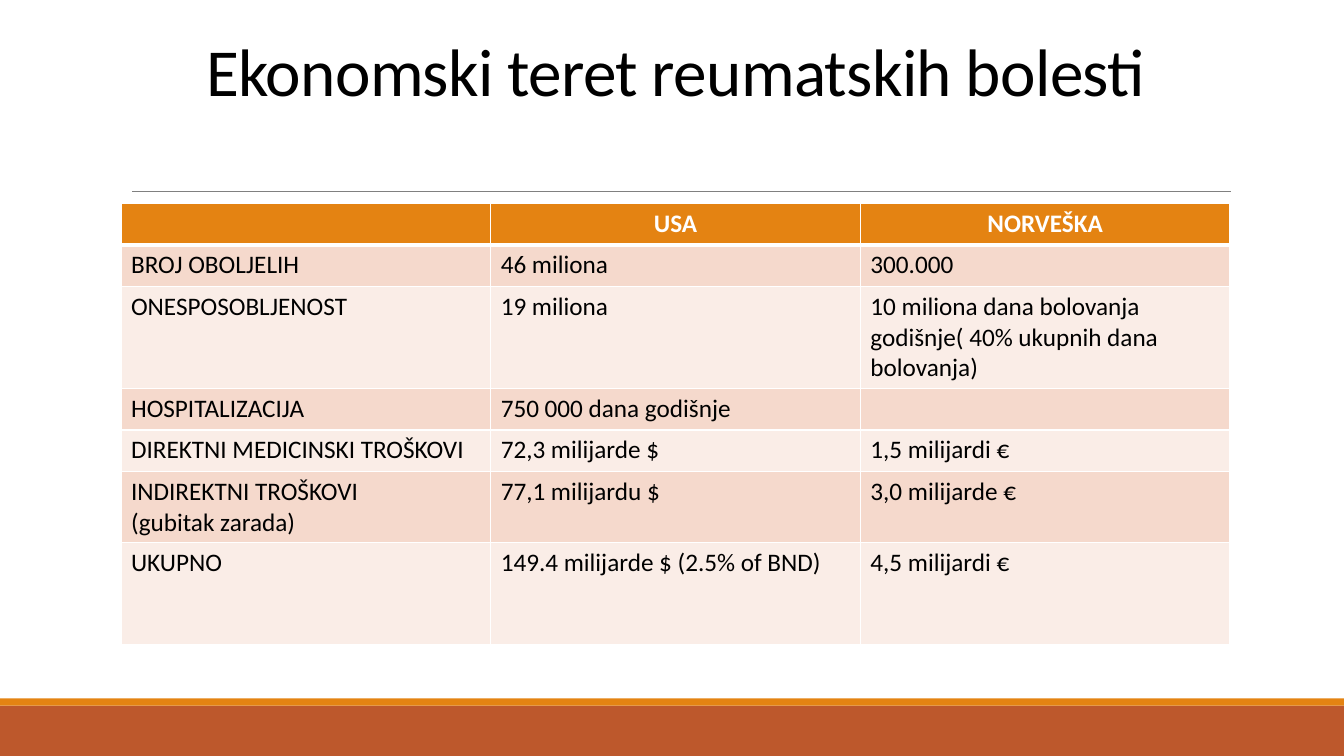
"""Build the slide on the economic burden of rheumatic diseases."""
from dataclasses import dataclass

from lxml.etree import SubElement
from pptx import Presentation
from pptx.dml.color import RGBColor
from pptx.enum.shapes import MSO_CONNECTOR, MSO_SHAPE
from pptx.enum.text import MSO_ANCHOR, MSO_AUTO_SIZE, PP_ALIGN
from pptx.oxml.ns import qn
from pptx.slide import Slide
from pptx.table import _Cell
from pptx.text.text import TextFrame
from pptx.util import Inches, Pt


@dataclass(frozen=True)
class Theme:
    font: str = "Calibri"
    ink: str = "000000"
    paper: str = "FFFFFF"
    rule: str = "808080"
    accent: str = "E48312"
    footer: str = "BD582C"
    bands: tuple[str, str] = ("F5D9CC", "FAEDE7")
    title_size: float = 48
    table_size: float = 18


@dataclass(frozen=True)
class Bar:
    top: float
    height: float
    color: str


@dataclass(frozen=True)
class Row:
    height: float
    cells: tuple[str, str, str]


THEME = Theme()
SLIDE_WIDTH, SLIDE_HEIGHT = 13.33, 7.5
LEFT, WIDTH = 1.2, 11

FOOTER_BARS = (Bar(7, 0.5, THEME.footer), Bar(6.93, 0.07, THEME.accent))
BURDEN_ROWS = (
    Row(0.41, ("", "USA", "NORVEŠKA")),
    Row(0.41, ("BROJ OBOLJELIH", "46 miliona", "300.000")),
    Row(1.01, ("ONESPOSOBLJENOST", "19 miliona",
               "10 miliona dana bolovanja godišnje( 40% ukupnih dana bolovanja)")),
    Row(0.41, ("HOSPITALIZACIJA", "750 000 dana godišnje", "")),
    Row(0.41, ("DIREKTNI MEDICINSKI TROŠKOVI", "72,3 milijarde $", "1,5 milijardi €")),
    Row(0.71, ("INDIREKTNI TROŠKOVI\n(gubitak zarada)", "77,1 milijardu $", "3,0 milijarde €")),
    Row(1.01, ("UKUPNO", "149.4 milijarde $ (2.5% of BND)", "4,5 milijardi €")),
)


def write(frame: TextFrame, text: str, *, size: float, color: str = THEME.ink,
          bold: bool = False, align: PP_ALIGN = PP_ALIGN.LEFT,
          line_spacing: float = 1.0, tracking: float = 0) -> None:
    frame.text = text
    for paragraph in frame.paragraphs:
        paragraph.alignment = align
        paragraph.line_spacing = line_spacing
        paragraph.font.size = Pt(size)
        for run in paragraph.runs:
            run.font.name = THEME.font
            run.font.size = Pt(size)
            run.font.bold = bold
            run.font.color.rgb = RGBColor.from_string(color)
            if tracking:
                run.font._element.set("spc", str(round(tracking * 100)))


def add_bar(slide: Slide, bar: Bar) -> None:
    strip = slide.shapes.add_shape(MSO_SHAPE.RECTANGLE, 0, Inches(bar.top),
                                   Inches(SLIDE_WIDTH), Inches(bar.height))
    strip.shadow.inherit = False
    strip.fill.solid()
    strip.fill.fore_color.rgb = RGBColor.from_string(bar.color)
    strip.line.fill.background()


def add_rule(slide: Slide) -> None:
    rule = slide.shapes.add_connector(MSO_CONNECTOR.STRAIGHT, Inches(1.31), Inches(1.9),
                                      Inches(12.21), Inches(1.9))
    rule.line.color.rgb = RGBColor.from_string(THEME.rule)
    rule.line.width = Pt(0.5)
    SubElement(rule._element.spPr, qn("a:effectLst"))


def add_title(slide: Slide, text: str) -> None:
    title = slide.shapes.title
    title.left, title.top = Inches(LEFT), Inches(0.31)
    title.width, title.height = Inches(WIDTH), Inches(1.59)
    frame = title.text_frame
    frame.word_wrap = True
    frame.auto_size = MSO_AUTO_SIZE.NONE
    frame.vertical_anchor = MSO_ANCHOR.BOTTOM
    frame.margin_bottom = Inches(0.81)
    write(frame, text, size=THEME.title_size, align=PP_ALIGN.CENTER,
          line_spacing=0.85, tracking=-0.5)


def style_cell(cell: _Cell, fill: str, top: float, bottom: float) -> None:
    properties = cell._tc.get_or_add_tcPr()
    for side, width in (("lnL", 1), ("lnR", 1), ("lnT", top), ("lnB", bottom)):
        border = SubElement(properties, qn(f"a:{side}"), w=str(Pt(width)))
        paint = SubElement(border, qn("a:solidFill"))
        SubElement(paint, qn("a:srgbClr"), val=THEME.paper)
    cell.fill.solid()
    cell.fill.fore_color.rgb = RGBColor.from_string(fill)


def add_burden_table(slide: Slide, rows: tuple[Row, ...]) -> None:
    columns = len(rows[0].cells)
    height = sum(row.height for row in rows)
    burden = slide.shapes.add_table(len(rows), columns, Inches(LEFT), Inches(2.02),
                                    Inches(WIDTH), Inches(height)).table
    for index, row in enumerate(rows):
        header = index == 0
        burden.rows[index].height = Inches(row.height)
        for column, text in enumerate(row.cells):
            cell = burden.cell(index, column)
            style_cell(cell, THEME.accent if header else THEME.bands[(index - 1) % 2],
                       top=3 if index == 1 else 1, bottom=3 if header else 1)
            write(cell.text_frame, text, size=THEME.table_size, bold=header,
                  color=THEME.paper if header else THEME.ink,
                  align=PP_ALIGN.CENTER if header else PP_ALIGN.LEFT)


def main() -> None:
    deck = Presentation()
    deck.slide_width, deck.slide_height = Inches(SLIDE_WIDTH), Inches(SLIDE_HEIGHT)
    slide = deck.slides.add_slide(deck.slide_layouts[5])
    for bar in FOOTER_BARS:
        add_bar(slide, bar)
    add_rule(slide)
    add_title(slide, "Ekonomski teret reumatskih bolesti")
    add_burden_table(slide, BURDEN_ROWS)
    deck.save("out.pptx")


if __name__ == "__main__":
    main()
